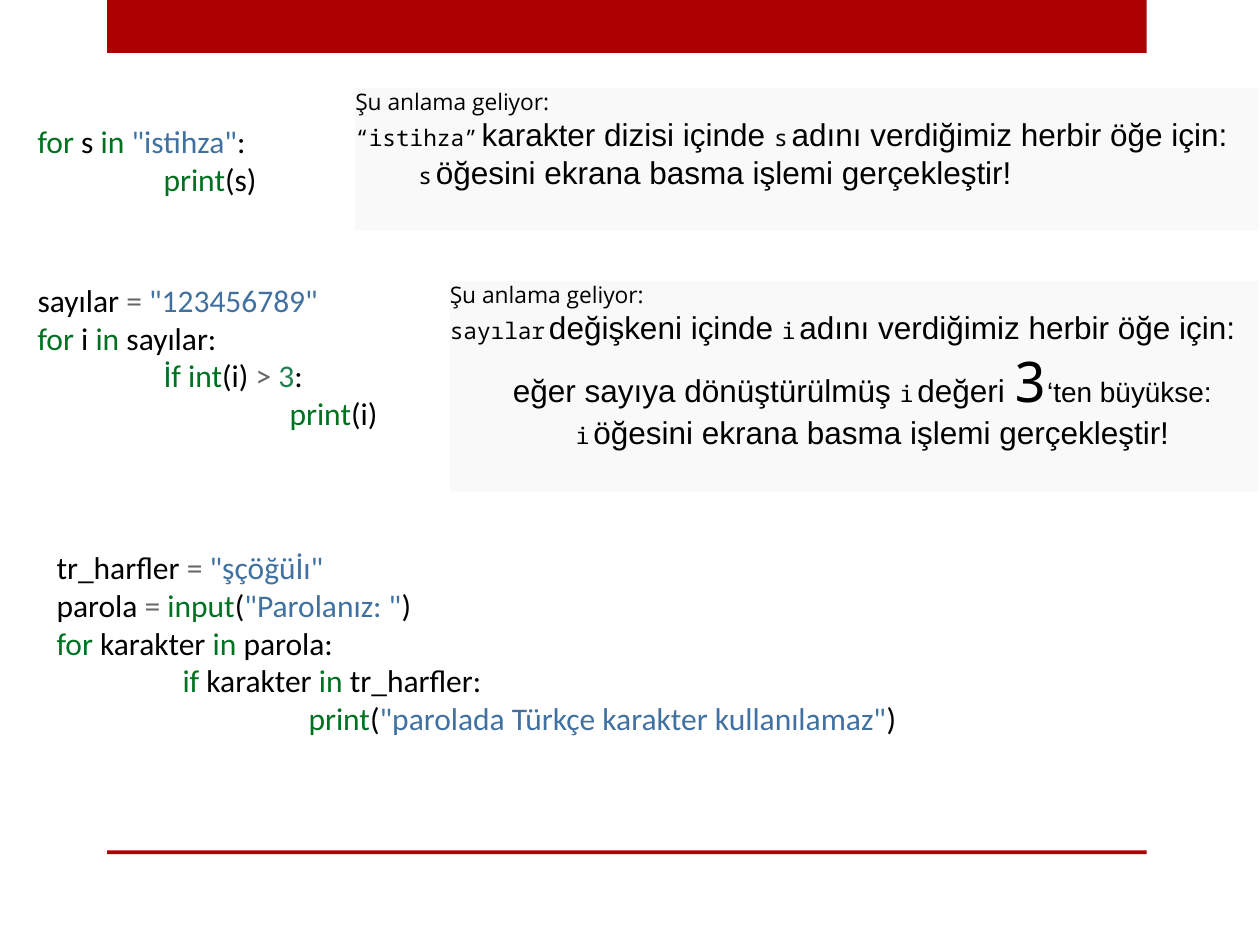
from pptx import Presentation
from pptx.dml.color import RGBColor
from pptx.enum import shapes, text
from pptx.util import Inches, Pt

# Content: each line is (indent level, runs); each run is (style, text)
STYLES = {  # font, size, colour
    "key": ("Calibri", 18, "007121"),
    "name": ("Calibri", 18, "000000"),
    "str": ("Calibri", 18, "4071A1"),
    "op": ("Calibri", 18, "666666"),
    "num": ("Calibri", 18, "21804F"),
    "intro": ("Open Sans", 13, "000000"),
    "mono": ("Noto Sans Mono", 13, "000000"),
    "big": ("Noto Sans Mono", 32, "000000"),
    "gap": ("Arial", 8, "000000"),
    "body": ("Arial", 18, "000000"),
    "small": ("Arial", 16, "000000"),
}
GAP = ("gap", " ")
INTRO = (0, [("intro", "Şu anlama geliyor:")])
FOR_EACH = ("body", "adını verdiğimiz herbir öğe için:")
PRINT_ITEM = ("body", "öğesini ekrana basma işlemi gerçekleştir!")

BARS = [(0.85, 0, 8.25, 0.42), (0.85, 6.75, 8.25, 0.03)]

CODE = [
    ((0.2, 0.92, 5, 0.71), [
        (0, [("key", "for "), ("name", "s "), ("key", "in "),
             ("str", '"istihza"'), ("name", ":")]),
        (1, [("key", "print"), ("name", "(s)")]),
    ]),
    ((0.2, 2.18, 5, 1.31), [
        (0, [("name", "sayılar "), ("op", "= "), ("str", '"123456789"')]),
        (0, [("key", "for "), ("name", "i "), ("key", "in "), ("name", "sayılar:")]),
        (1, [("key", "İf int"), ("name", "(i) "), ("op", "> "),
             ("num", "3"), ("name", ":")]),
        (2, [("key", "print"), ("name", "(i)")]),
    ]),
    ((0.35, 4.3, 7.48, 1.62), [
        (0, [("name", "tr_harfler "), ("op", "= "), ("str", '"şçöğüİı"')]),
        (0, [("name", "parola "), ("op", "= "), ("key", "input"), ("name", "("),
             ("str", '"Parolanız: "'), ("name", ")")]),
        (0, [("key", "for "), ("name", "karakter "), ("key", "in "),
             ("name", "parola:")]),
        (1, [("key", "if "), ("name", "karakter "), ("key", "in "),
             ("name", "tr_harfler:")]),
        (2, [("key", "print"), ("name", "("),
             ("str", '"parolada Türkçe karakter kullanılamaz"'), ("name", ")")]),
    ]),
]

MEANINGS = [
    ((2.82, 0.7, 7.17, 1.13), [
        INTRO,
        (0, [("mono", "“istihza”"), GAP, ("body", "karakter dizisi içinde "),
             ("mono", "s"), GAP, FOR_EACH]),
        (1, [("mono", "s"), GAP, PRINT_ITEM]),
    ]),
    ((3.57, 2.23, 6.42, 1.67), [
        INTRO,
        (0, [("mono", "sayılar"), GAP, ("body", "değişkeni içinde "),
             ("mono", "i"), GAP, FOR_EACH]),
        (1, [("body", "eğer sayıya dönüştürülmüş "), ("mono", "i"), GAP,
             ("body", "değeri "), ("big", "3"), ("small", "‘ten büyükse:")]),
        (2, [("mono", "i"), GAP, PRINT_ITEM]),
    ]),
]


def rgb(value):
    return RGBColor.from_string(value)


def add_box(s, at, fill):
    sp = s.shapes.add_shape(shapes.MSO_SHAPE.RECTANGLE, *map(Inches, at))
    sp.shadow.inherit = False
    sp.fill.solid()
    sp.fill.fore_color.rgb = rgb(fill)
    sp.line.fill.background()
    return sp


def write_lines(tf, lines, step):
    """Write the lines, indenting each level by step inches."""
    tf.word_wrap = True
    tf.vertical_anchor = text.MSO_ANCHOR.TOP
    for i, (level, runs) in enumerate(lines):
        p = tf.add_paragraph() if i else tf.paragraphs[0]
        p.alignment = text.PP_ALIGN.LEFT
        p.level = level
        pPr = p._p.get_or_add_pPr()
        pPr.set("marL", str(Inches(step * level)))
        pPr.set("indent", "0")
        for style, words in runs:
            r = p.add_run()
            r.text = words
            name, size, colour = STYLES[style]
            r.font.name, r.font.size = name, Pt(size)
            r.font.color.rgb = rgb(colour)


prs = Presentation()
prs.slide_width, prs.slide_height = Inches(10), Inches(7.5)
s = prs.slides.add_slide(prs.slide_layouts[6])

# Red bars at top and bottom
for at in BARS:
    add_box(s, at, "AD0101")

# Code samples
for at, lines in CODE:
    sp = s.shapes.add_textbox(*map(Inches, at))
    write_lines(sp.text_frame, lines, step=1)

# Explanations on grey panels
for at, lines in MEANINGS:
    tf = add_box(s, at, "F9F9F9").text_frame
    tf.margin_left = tf.margin_right = tf.margin_top = tf.margin_bottom = 0
    write_lines(tf, lines, step=0.5)

prs.save("out.pptx")
